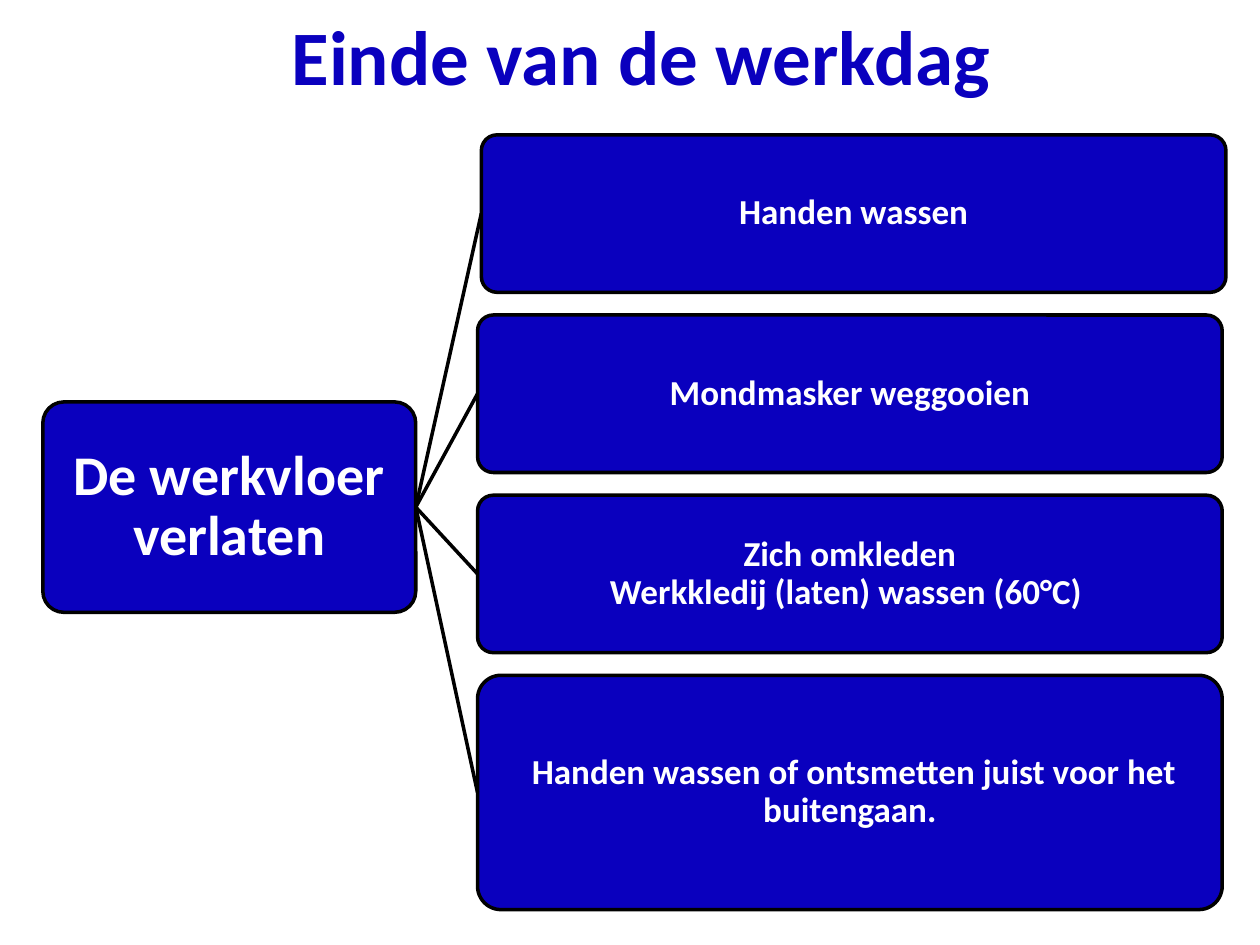
from dataclasses import dataclass

from lxml.etree import SubElement
from pptx import Presentation
from pptx.dml.color import RGBColor
from pptx.enum.shapes import MSO_CONNECTOR, MSO_SHAPE
from pptx.enum.text import MSO_ANCHOR, PP_ALIGN
from pptx.oxml.ns import qn
from pptx.shapes.autoshape import Shape
from pptx.slide import Slide
from pptx.text.text import TextFrame
from pptx.util import Inches, Pt


@dataclass(frozen=True)
class Theme:
    font: str = "Calibri"
    blue: RGBColor = RGBColor(0x0A, 0x00, 0xBE)
    white: RGBColor = RGBColor(0xFF, 0xFF, 0xFF)
    black: RGBColor = RGBColor(0, 0, 0)
    title_size: Pt = Pt(44)
    topic_size: Pt = Pt(32)
    step_size: Pt = Pt(20)
    line_width: Pt = Pt(2)


@dataclass(frozen=True)
class Box:
    text: str
    left: float
    top: float
    width: float
    height: float
    size: Pt


THEME = Theme()
LEFT_SITE, RIGHT_SITE = 1, 3

# Steps are stacked downwards with an equal gap
STEP_WIDTH, STEP_GAP, FIRST_TOP = 5.91, 0.18, 1.07
STEPS = [  # text, left, height
    ("Handen wassen", 3.82, 1.25),
    ("Mondmasker weggooien", 3.79, 1.25),
    ("Zich omkleden\vWerkkledij (laten) wassen (60°C) ", 3.79, 1.25),
    (" Handen wassen of ontsmetten juist voor het buitengaan.", 3.79, 1.86),
]


def write(frame: TextFrame, text: str, size: Pt, color: RGBColor) -> None:
    frame.word_wrap = True
    frame.vertical_anchor = MSO_ANCHOR.MIDDLE
    paragraph = frame.paragraphs[0]
    paragraph.text = text
    paragraph.alignment = PP_ALIGN.CENTER
    font = paragraph.font
    font.name, font.size, font.bold = THEME.font, size, True
    font.color.rgb = color


def draw_box(slide: Slide, box: Box) -> Shape:
    shape = slide.shapes.add_shape(
        MSO_SHAPE.ROUNDED_RECTANGLE, Inches(box.left), Inches(box.top),
        Inches(box.width), Inches(box.height))
    shape.adjustments[0] = 0.1
    shape.shadow.inherit = False
    shape.fill.solid()
    shape.fill.fore_color.rgb = THEME.blue
    shape.line.color.rgb = THEME.black
    shape.line.width = THEME.line_width
    frame = shape.text_frame
    frame.margin_left = frame.margin_right = Inches(0.05)
    frame.margin_top = frame.margin_bottom = Inches(0.05)
    write(frame, box.text, box.size, THEME.white)
    frame.paragraphs[0].line_spacing = 0.9
    return shape


def draw_branch(slide: Slide, start: Shape, end: Shape) -> None:
    branch = slide.shapes.add_connector(MSO_CONNECTOR.STRAIGHT, 0, 0, 0, 0)
    branch.begin_connect(start, RIGHT_SITE)
    branch.end_connect(end, LEFT_SITE)
    branch.line.color.rgb = THEME.black
    branch.line.width = THEME.line_width
    SubElement(branch._element.spPr, qn("a:effectLst"))


def main() -> None:
    presentation = Presentation()
    presentation.slide_width, presentation.slide_height = Inches(10), Inches(7.5)
    slide = presentation.slides.add_slide(presentation.slide_layouts[6])

    # Topic on the left
    topic = draw_box(slide, Box("De werkvloer verlaten", 0.34, 3.19, 2.96, 1.67,
                                THEME.topic_size))

    # Steps on the right, each joined to the topic
    top = FIRST_TOP
    for text, left, height in STEPS:
        step = draw_box(slide, Box(text, left, top, STEP_WIDTH, height,
                                   THEME.step_size))
        draw_branch(slide, topic, step)
        top += height + STEP_GAP

    # Title
    title = slide.shapes.add_textbox(Inches(0.59), Inches(-0.19), Inches(9), Inches(1.25))
    write(title.text_frame, "Einde van de werkdag", THEME.title_size, THEME.blue)

    presentation.save("out.pptx")


if __name__ == "__main__":
    main()
